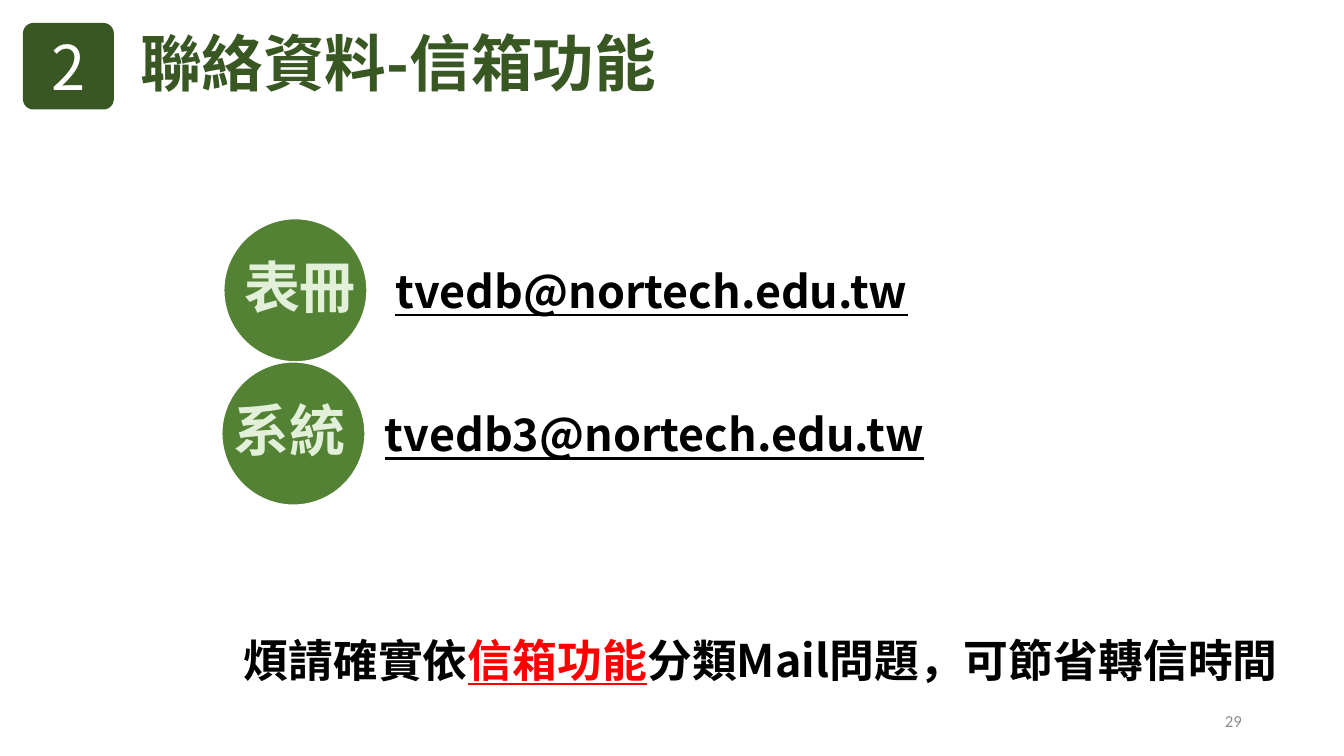
from dataclasses import dataclass

from lxml import etree
from pptx import Presentation
from pptx.dml.color import RGBColor
from pptx.enum.shapes import MSO_SHAPE
from pptx.enum.text import MSO_ANCHOR, MSO_AUTO_SIZE, PP_ALIGN
from pptx.oxml.ns import qn
from pptx.util import Cm, Pt

ELLIPSE, ROUNDED = MSO_SHAPE.OVAL, MSO_SHAPE.ROUNDED_RECTANGLE
LEFT, CENTER, RIGHT = PP_ALIGN.LEFT, PP_ALIGN.CENTER, PP_ALIGN.RIGHT
TOP, MIDDLE = MSO_ANCHOR.TOP, MSO_ANCHOR.MIDDLE
NO_FIT = MSO_AUTO_SIZE.NONE


@dataclass(frozen=True)
class Theme:
    font: str = "Noto Sans CJK SC"
    number_font: str = "Calibri"
    dark: str = "385723"
    green: str = "548235"
    pale: str = "E2F0D9"
    black: str = "000000"
    white: str = "FFFFFF"
    red: str = "FF0000"
    grey: str = "8C8C8C"
    title: int = 44
    label: int = 40
    body: int = 32
    small: int = 12


@dataclass(frozen=True)
class Mailbox:
    label: str
    address: str
    circle_left: float
    text_left: float
    tab: float


THEME = Theme()
MAILBOXES = [
    Mailbox("表冊", "tvedb@nortech.edu.tw", 5.64, 6.15, 3.81),
    Mailbox("系統", "tvedb3@nortech.edu.tw", 5.59, 5.89, 4.11),
]
FIRST_TOP, DIAMETER = 5.51, 3.61


def place(sp, left: float, top: float, width: float, height: float) -> None:
    sp.left, sp.top, sp.width, sp.height = map(Cm, (left, top, width, height))


def add_run(p, text: str, *, size: int, color: str, bold: bool = True,
            underline: bool = False, font: str = THEME.font) -> None:
    r = p.add_run()
    r.text = text
    f = r.font
    f.size, f.bold, f.underline, f.name = Pt(size), bold, underline, font
    f.color.rgb = RGBColor.from_string(color)
    etree.SubElement(r._r.get_or_add_rPr(), qn("a:ea"), typeface=font)


def start_text(sp, *, align=LEFT, anchor=MIDDLE, spacing=None):
    tf = sp.text_frame
    tf.word_wrap, tf.auto_size, tf.vertical_anchor = True, NO_FIT, anchor
    p = tf.paragraphs[0]
    p.alignment, p.line_spacing = align, spacing
    return p


def add_shape(s, kind, box: tuple[float, ...], fill: str, line: str | None = None):
    sp = s.shapes.add_shape(kind, *map(Cm, box))
    sp.shadow.inherit = False
    sp.fill.solid()
    sp.fill.fore_color.rgb = RGBColor.from_string(fill)
    if line:
        sp.line.color.rgb = RGBColor.from_string(line)
        sp.line.width = Pt(1)
    else:
        sp.line.fill.background()
    return sp


def draw_mailbox(s, sp, row: Mailbox, top: float) -> None:
    add_shape(s, ELLIPSE, (row.circle_left, top, DIAMETER, DIAMETER), THEME.green, THEME.white)
    place(sp, row.text_left, top, 19.3, DIAMETER)
    sp.element.getparent().append(sp.element)  # in front of its circle
    p = start_text(sp, spacing=0.9)
    tf = sp.text_frame
    tf.margin_left = tf.margin_right = 0
    tf.margin_top = tf.margin_bottom = Cm(0.15)
    p.space_before = Pt(0)
    # No bullet, and a tab stop where the address begins
    pPr = p._p.get_or_add_pPr()
    pPr.set("marL", "0")
    pPr.set("indent", "0")
    etree.SubElement(pPr, qn("a:buNone"))
    tabs = etree.SubElement(pPr, qn("a:tabLst"))
    etree.SubElement(tabs, qn("a:tab"), pos=str(Cm(row.tab)), algn="l")
    add_run(p, row.label + "\t", size=THEME.label, color=THEME.pale)
    add_run(p, row.address, size=THEME.body, color=THEME.black, underline=True)


def main() -> None:
    prs = Presentation()
    prs.slide_width, prs.slide_height = Cm(33.87), Cm(19.05)
    s = prs.slides.add_slide(prs.slide_layouts[3])
    title, *bodies = s.placeholders

    # Title and section number
    place(title, 3.28, 0.61, 21.89, 2.13)
    p = start_text(title, spacing=0.9)
    p.space_before = Pt(10)
    add_run(p, "聯絡資料-信箱功能", size=THEME.title, color=THEME.dark)
    badge = add_shape(s, ROUNDED, (0.58, 0.58, 2.29, 2.18), THEME.dark)
    badge.adjustments[0] = 0.12
    add_run(start_text(badge, align=CENTER), "2", size=THEME.title,
            color=THEME.white, bold=False)

    # Mailboxes
    for i, (sp, row) in enumerate(zip(bodies, MAILBOXES)):
        draw_mailbox(s, sp, row, FIRST_TOP + i * DIAMETER)

    # Reminder
    note = s.shapes.add_textbox(Cm(5.89), Cm(14.88), Cm(27.97), Cm(2.54))
    p = start_text(note, anchor=TOP, spacing=Pt(65))
    add_run(p, "煩請確實依", size=THEME.body, color=THEME.black)
    add_run(p, "信箱功能", size=THEME.body, color=THEME.red, underline=True)
    add_run(p, "分類Mail問題，可節省轉信時間", size=THEME.body, color=THEME.black)

    # Page number
    page = s.shapes.add_textbox(Cm(23.93), Cm(17.65), Cm(7.62), Cm(1.02))
    add_run(start_text(page, align=RIGHT), "29", size=THEME.small, color=THEME.grey,
            bold=False, font=THEME.number_font)

    prs.save("out.pptx")


if __name__ == "__main__":
    main()
